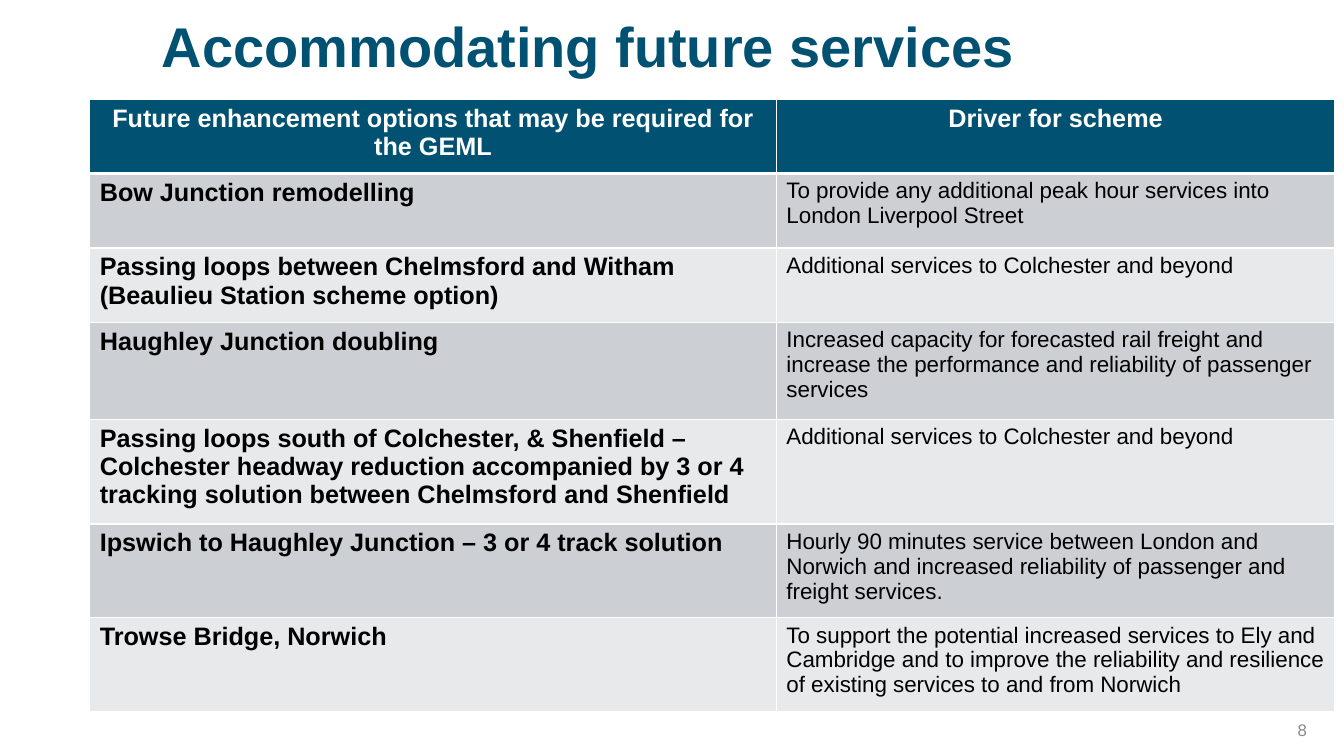
from pptx import Presentation
from pptx.dml.color import RGBColor
from pptx.enum.text import MSO_ANCHOR, MSO_AUTO_SIZE, PP_ALIGN
from pptx.oxml import parse_xml
from pptx.oxml.ns import nsdecls
from pptx.util import Inches, Pt

FONT = "Arial"
TEAL = "005172"
WHITE = "FFFFFF"
BLACK = "000000"
GREY = "898989"
BANDS = ("CCD0D5", "E7E9EB")

HEADINGS = ("Future enhancement options that may be required for the GEML", "Driver for scheme")
SCHEMES = [
    ("Bow Junction remodelling",
     "To provide any additional peak hour services into London Liverpool Street"),
    ("Passing loops between Chelmsford and Witham (Beaulieu Station scheme option)",
     "Additional services to Colchester and beyond"),
    ("Haughley Junction doubling",
     "Increased capacity for forecasted rail freight and increase the performance "
     "and reliability of passenger services"),
    ("Passing loops south of Colchester, & Shenfield – Colchester headway reduction "
     "accompanied by 3 or 4 tracking solution between Chelmsford and Shenfield",
     "Additional services to Colchester and beyond"),
    ("Ipswich to Haughley Junction – 3 or 4 track solution",
     "Hourly 90 minutes service between London and Norwich and increased reliability "
     "of passenger and freight services."),
    ("Trowse Bridge, Norwich",
     "To support the potential increased services to Ely and Cambridge and to improve "
     "the reliability and resilience of existing services to and from Norwich"),
]
COLUMN_WIDTHS = (6.81, 5.54)
ROW_HEIGHTS = (0.73, 0.74, 0.74, 0.96, 1.04, 0.93, 0.93)


def color(hex_string):
    return RGBColor.from_string(hex_string)


class SlideBuilder:
    """Holds the text style and the current slide."""

    def __init__(self, slide, font):
        self.slide = slide
        self.font = font

    def set_text(self, text_frame, text, size, text_color, bold=False, align=PP_ALIGN.LEFT):
        text_frame.text = text
        text_frame.word_wrap = True
        paragraph = text_frame.paragraphs[0]
        paragraph.alignment = align
        font = paragraph.runs[0].font
        font.name = self.font
        font.size = Pt(size)
        font.bold = bold
        font.color.rgb = color(text_color)
        return paragraph

    def title(self, text, left, top, width, height):
        shape = self.slide.shapes.title
        shape.left, shape.top = Inches(left), Inches(top)
        shape.width, shape.height = Inches(width), Inches(height)
        text_frame = shape.text_frame
        paragraph = self.set_text(text_frame, text, 40, TEAL, True, PP_ALIGN.CENTER)
        paragraph.line_spacing = 0.9
        paragraph.space_before = Pt(0)
        text_frame.vertical_anchor = MSO_ANCHOR.TOP
        text_frame.auto_size = MSO_AUTO_SIZE.SHAPE_TO_FIT_TEXT

    def page_number(self, text, left, top, width, height):
        box = self.slide.shapes.add_textbox(
            Inches(left), Inches(top), Inches(width), Inches(height))
        self.set_text(box.text_frame, text, 12, GREY, align=PP_ALIGN.RIGHT)
        box.text_frame.vertical_anchor = MSO_ANCHOR.MIDDLE

    def table(self, left, top, column_widths, row_heights):
        frame = self.slide.shapes.add_table(
            len(row_heights), len(column_widths), Inches(left), Inches(top),
            Inches(sum(column_widths)), Inches(sum(row_heights)))
        for column, width in zip(frame.table.columns, column_widths):
            column.width = Inches(width)
        for row, height in zip(frame.table.rows, row_heights):
            row.height = Inches(height)
        return frame.table

    def cell(self, cell, text, size, text_color, fill, bold, align, top_line, bottom_line):
        self.set_text(cell.text_frame, text, size, text_color, bold, align)
        properties = cell._tc.get_or_add_tcPr()
        for side, points in (("L", 1), ("R", 1), ("T", top_line), ("B", bottom_line)):
            properties.append(parse_xml(
                f'<a:ln{side} {nsdecls("a")} w="{Pt(points)}"><a:solidFill>'
                f'<a:srgbClr val="{WHITE}"/></a:solidFill></a:ln{side}>'))
        cell.fill.solid()
        cell.fill.fore_color.rgb = color(fill)


def main():
    presentation = Presentation()
    presentation.slide_width = Inches(13.33)
    presentation.slide_height = Inches(7.5)
    slide = presentation.slides.add_slide(presentation.slide_layouts[5])
    builder = SlideBuilder(slide, FONT)

    builder.title("Accommodating future services", 0.98, 0.14, 9.7, 0.71)
    table = builder.table(0.89, 0.99, COLUMN_WIDTHS, ROW_HEIGHTS)
    for column, heading in enumerate(HEADINGS):
        builder.cell(table.cell(0, column), heading, 18, WHITE, TEAL, True,
                     PP_ALIGN.CENTER, 1, 3)
    for row, (scheme, driver) in enumerate(SCHEMES, start=1):
        band = BANDS[(row - 1) % 2]
        top_line = 3 if row == 1 else 1
        builder.cell(table.cell(row, 0), scheme, 18, BLACK, band, True,
                     PP_ALIGN.LEFT, top_line, 1)
        builder.cell(table.cell(row, 1), driver, 16, BLACK, band, False,
                     PP_ALIGN.LEFT, top_line, 1)
    builder.page_number("8", 12.13, 7.14, 0.93, 0.2)

    presentation.save("out.pptx")


if __name__ == "__main__":
    main()
